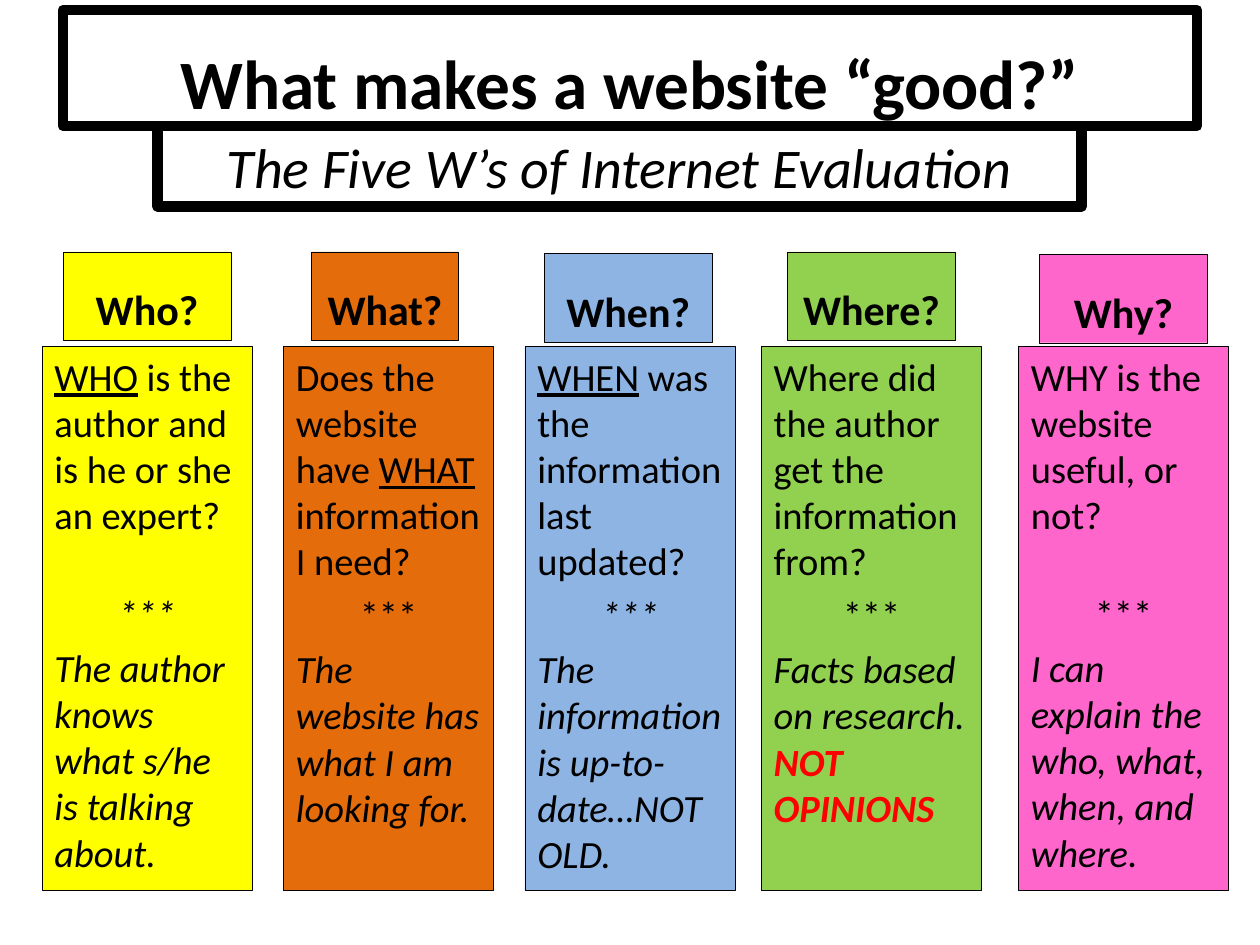
from pptx import Presentation
from pptx.dml.color import RGBColor
from pptx.enum.shapes import MSO_SHAPE
from pptx.enum.text import MSO_ANCHOR, PP_ALIGN
from pptx.util import Pt


def style_box(box, fill, line_width, anchor):
    if fill:
        box.fill.solid()
        box.fill.fore_color.rgb = RGBColor.from_string(fill)
    else:
        box.fill.background()
    box.line.color.rgb = RGBColor.from_string("000000")
    box.line.width = Pt(line_width)
    box.shadow.inherit = False
    box.text_frame.word_wrap = True
    box.text_frame.vertical_anchor = anchor


def write_runs(paragraph, runs, size, align, space=0):
    paragraph.alignment = align
    paragraph.space_before = Pt(space)
    for text, marks, color in runs:
        run = paragraph.add_run()
        run.text = text
        font = run.font
        font.name = "Calibri"
        font.size = Pt(size)
        font.bold = "b" in marks
        font.italic = "i" in marks
        font.underline = "u" in marks
        font.color.rgb = RGBColor.from_string(color)


BLACK = "000000"
RED = "FF0000"
CENTER, LEFT = PP_ALIGN.CENTER, PP_ALIGN.LEFT

deck = Presentation()
deck.slide_width, deck.slide_height = Pt(720), Pt(540)
slide = deck.slides.add_slide(deck.slide_layouts[5])

title = slide.shapes.title
title.left, title.top, title.width, title.height = Pt(36), Pt(5.76), Pt(648), Pt(66.24)
style_box(title, None, 6, MSO_ANCHOR.TOP)
title.text_frame.margin_top = Pt(17)
title.text_frame.margin_bottom = Pt(0)
write_runs(title.text_frame.paragraphs[0],
           [("What makes a website “good?”", "b", BLACK)], 39.6, CENTER)

subtitle = slide.shapes.add_shape(MSO_SHAPE.RECTANGLE, Pt(90), Pt(72), Pt(528), Pt(46))
style_box(subtitle, None, 6, MSO_ANCHOR.TOP)
write_runs(subtitle.text_frame.paragraphs[0],
           [("The Five W’s of Internet Evaluation", "i", BLACK)], 32, CENTER)

columns = [
    ("Who?", "FFFF00", (36, 144, 96), (24, 120), 30, "i",
     [("WHO", "u", BLACK), (" is the author and is he or she an expert?", "", BLACK)],
     [("The author knows what s/he is talking about.", "i", BLACK)]),
    ("What?", "E46C0A", (178, 144, 84), (162, 120), 4.4, "",
     [("Does the website have ", "", BLACK), ("WHAT", "u", BLACK),
      (" information I need?", "", BLACK)],
     [("The website has what I am looking for.", "i", BLACK)]),
    ("When?", "8EB4E3", (311, 145, 96), (300, 120), 4.4, "i",
     [("WHEN", "u", BLACK), (" was the information last updated?", "", BLACK)],
     [("The information is up-to-date…NOT OLD.", "i", BLACK)]),
    ("Where?", "92D050", (450, 144, 96), (435, 126), 4.4, "",
     [("Where did the author get the information from?", "", BLACK)],
     [("Facts based on research. ", "i", BLACK), ("NOT OPINIONS", "bi", RED)]),
    ("Why?", "FF66CC", (594, 145.5, 96), (582, 120), 30, "",
     [("WHY is the website useful, or not?", "", BLACK)],
     [("I can explain the who, what, when, and where.", "i", BLACK)]),
]

for word, color, heading_place, body_place, star_gap, star_marks, question, answer in columns:
    left, top, width = heading_place
    heading = slide.shapes.add_shape(MSO_SHAPE.RECTANGLE, Pt(left), Pt(top), Pt(width), Pt(50.4))
    style_box(heading, color, 0.25, MSO_ANCHOR.BOTTOM)
    write_runs(heading.text_frame.paragraphs[0], [(word, "b", BLACK)], 24, CENTER)

    left, width = body_place
    body = slide.shapes.add_shape(MSO_SHAPE.RECTANGLE, Pt(left), Pt(198), Pt(width), Pt(311))
    style_box(body, color, 0.25, MSO_ANCHOR.TOP)
    frame = body.text_frame
    write_runs(frame.paragraphs[0], question, 22, LEFT)
    write_runs(frame.add_paragraph(), [("***", star_marks, BLACK)], 22, CENTER, star_gap)
    write_runs(frame.add_paragraph(), answer, 22, LEFT, 4.4)

deck.save("out.pptx")
